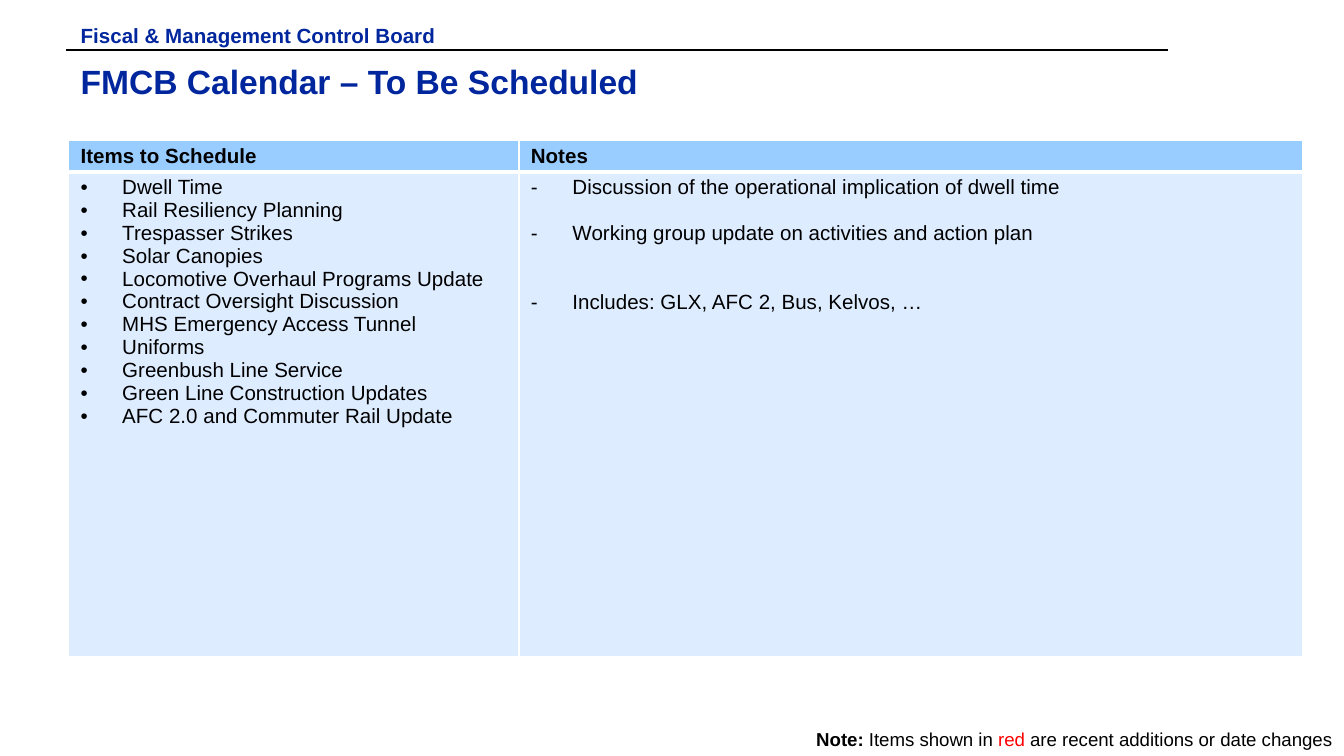
"""Build the control board slide of calendar items still to be scheduled."""
from lxml import etree
from pptx import Presentation, util as u
from pptx.dml.color import RGBColor
from pptx.enum import shapes, text
from pptx.oxml import ns

THEME = {
    "font": "Arial",
    "navy": "00269E", "black": "000000", "red": "FF0000", "white": "FFFFFF",
    "header": "99CCFF", "body": "DEECFF",
    "title_size": 18, "text_size": 11, "note_size": 10, "line_gap": 12.3,
}


def add_run(paragraph, words, size, color="black", bold=False):
    run = paragraph.add_run()
    run.text = words
    formats = {"name": THEME["font"], "size": u.Pt(THEME[size]), "bold": bold}
    for name, value in formats.items():
        setattr(run.font, name, value)
    run.font.color.rgb = RGBColor.from_string(THEME[color])


def set_layout(holder, margin, anchor):
    formats = {"margin_left": u.Inches(0.09), "margin_right": u.Inches(0.09),
               "margin_top": u.Inches(margin), "margin_bottom": u.Inches(margin),
               "vertical_anchor": anchor}
    for name, value in formats.items():
        setattr(holder, name, value)


presentation = Presentation()
presentation.slide_width = u.Inches(10)
presentation.slide_height = u.Inches(10 * 9 / 16)
slide = presentation.slides.add_slide(presentation.slide_layouts[1])

rule = slide.shapes.add_connector(
    shapes.MSO_CONNECTOR.STRAIGHT,
    u.Inches(0.49), u.Inches(0.37), u.Inches(8.69), u.Inches(0.37))
rule.line.color.rgb = RGBColor.from_string(THEME["black"])
rule.line.width = u.Pt(1)
etree.SubElement(rule._element.spPr, ns.qn("a:effectLst"))

headings = [
    (slide.shapes.title, "FMCB Calendar – To Be Scheduled", "title_size",
     (0.51, 0.4, 8.36, 0.48)),
    (slide.placeholders[1], "Fiscal & Management Control Board", "text_size",
     (0.51, 0.12, 3.41, 0.19)),
]
for shape, words, size, box in headings:
    for name, value in zip(("left", "top", "width", "height"), box):
        setattr(shape, name, u.Inches(value))
    set_layout(shape.text_frame, 0.05, text.MSO_ANCHOR.TOP)
    shape.text_frame.word_wrap = True
    shape.text_frame.auto_size = text.MSO_AUTO_SIZE.NONE
    paragraph = shape.text_frame.paragraphs[0]
    paragraph.alignment = text.PP_ALIGN.LEFT
    paragraph.space_before = u.Pt(0)
    properties = paragraph._p.get_or_add_pPr()
    properties.set("marL", "0")
    properties.set("indent", "0")
    etree.SubElement(properties, ns.qn("a:buNone"))
    add_run(paragraph, words, size, "navy", True)

items = ["Dwell Time", "Rail Resiliency Planning", "Trespasser Strikes",
         "Solar Canopies", "Locomotive Overhaul Programs Update",
         "Contract Oversight Discussion", "MHS Emergency Access Tunnel",
         "Uniforms", "Greenbush Line Service",
         "Green Line Construction Updates", "AFC 2.0 and Commuter Rail Update"]
notes = [("Discussion of the operational implication of dwell time", 0),
         ("Working group update on activities and action plan", 1),
         ("Includes: GLX, AFC 2, Bus, Kelvos, …", 2)]
columns = [
    ("Items to Schedule", 3.35, "•", [(item, 0) for item in items]),
    ("Notes", 5.83, "-", notes),
]

table = slide.shapes.add_table(
    2, 2, u.Inches(0.51), u.Inches(1.04), u.Inches(9.19), u.Inches(3.85)).table
table.horz_banding = False
for row, height in zip(table.rows, (0.24, 3.61)):
    row.height = u.Inches(height)

for column, (heading, width, bullet, entries) in enumerate(columns):
    table.columns[column].width = u.Inches(width)
    header, body = table.cell(0, column), table.cell(1, column)
    for cell, color, anchor in ((header, "header", text.MSO_ANCHOR.MIDDLE),
                                (body, "body", text.MSO_ANCHOR.TOP)):
        set_layout(cell, 0.03, anchor)
        borders = {"lnL": 1, "lnR": 1, "lnT": 1, "lnB": 1}
        borders["lnB" if cell is header else "lnT"] = 3
        for side, points in borders.items():
            border = etree.SubElement(cell._tc.get_or_add_tcPr(), ns.qn(f"a:{side}"),
                                      w=str(u.Pt(points)))
            fill = etree.SubElement(border, ns.qn("a:solidFill"))
            etree.SubElement(fill, ns.qn("a:srgbClr"), val=THEME["white"])
        cell.fill.solid()
        cell.fill.fore_color.rgb = RGBColor.from_string(THEME[color])
    add_run(header.text_frame.paragraphs[0], heading, "text_size", bold=True)
    for index, (words, skipped) in enumerate(entries):
        frame = body.text_frame
        paragraph = frame.add_paragraph() if index else frame.paragraphs[0]
        if skipped:
            paragraph.space_before = u.Pt(skipped * THEME["line_gap"])
        properties = paragraph._p.get_or_add_pPr()
        properties.set("marL", str(u.Inches(0.31)))
        properties.set("indent", str(-u.Inches(0.31)))
        etree.SubElement(properties, ns.qn("a:buFont"), typeface=THEME["font"])
        etree.SubElement(properties, ns.qn("a:buChar"), char=bullet)
        add_run(paragraph, words, "text_size")

note = slide.shapes.add_textbox(
    u.Inches(5.8), u.Inches(5.37), u.Inches(4.2), u.Inches(0.26))
set_layout(note.text_frame, 0.05, text.MSO_ANCHOR.TOP)
note.text_frame.word_wrap = True
paragraph = note.text_frame.paragraphs[0]
paragraph.alignment = text.PP_ALIGN.RIGHT
for words, color, bold in (("Note: ", "black", True),
                           ("Items shown in ", "black", False),
                           ("red", "red", False),
                           (" are recent additions or date changes", "black", False)):
    add_run(paragraph, words, "note_size", color, bold)

presentation.save("out.pptx")
